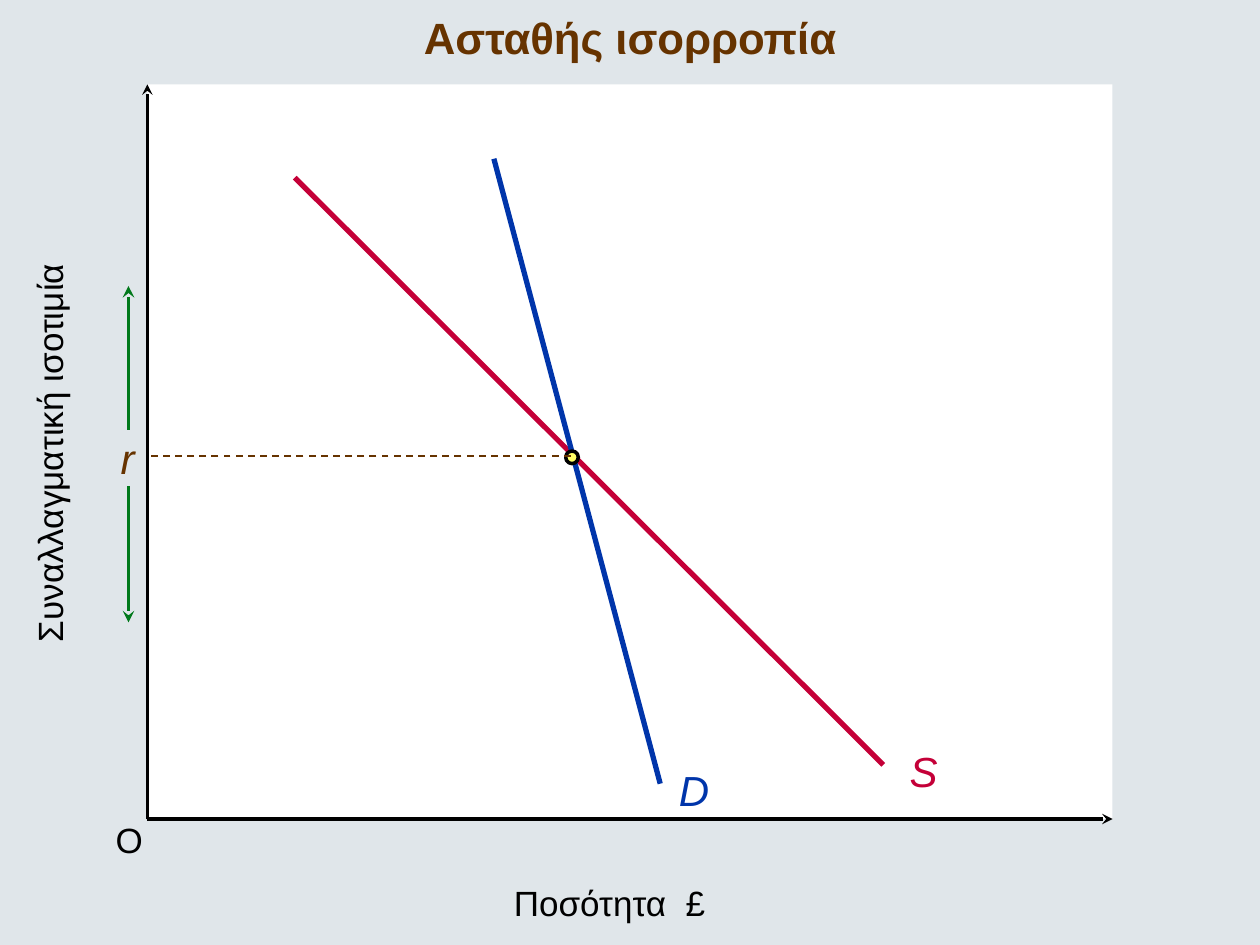
"""Build a slide showing an unstable equilibrium in the currency market."""
from lxml.etree import SubElement
from pptx import Presentation
from pptx.dml.color import RGBColor
from pptx.enum.dml import MSO_LINE
from pptx.enum.shapes import MSO_CONNECTOR, MSO_SHAPE
from pptx.enum.text import MSO_ANCHOR, MSO_AUTO_SIZE, PP_ALIGN
from pptx.oxml import parse_xml
from pptx.oxml.ns import nsdecls, qn
from pptx.util import Inches, Pt

BACKGROUND = RGBColor(0xE0, 0xE6, 0xEA)
WHITE = RGBColor(0xFF, 0xFF, 0xFF)
BLACK = RGBColor(0, 0, 0)
RED = RGBColor(0xC4, 0x00, 0x38)
BLUE = RGBColor(0x00, 0x35, 0xAA)
GREEN = RGBColor(0x01, 0x79, 0x1B)
BROWN = RGBColor(0x66, 0x33, 0x00)
YELLOW = RGBColor(0xFF, 0xFF, 0x66)
FONT = "Arial"

TITLE = "Ασταθής ισορροπία"
LEFT, TOP, RIGHT, BOTTOM = 1.17, 0.67, 8.83, 6.5
ORIGIN = (LEFT, BOTTOM)
RATE_X, RATE_Y = 1.02, 3.62
MARKER = (4.49, 3.58, 0.1, 0.1)

AXES = [(ORIGIN, (LEFT, TOP)), (ORIGIN, (RIGHT, BOTTOM))]
CURVES = [
    ((2.34, 1.41), (7.01, 6.07), RED),
    ((3.92, 1.26), (5.24, 6.22), BLUE),
]
RATE_MOVES = [(3.41, 2.27), (3.86, 4.94)]
LABELS = [
    ("O", (0.82, 6.45, 0.42, 0.43), 20, BLACK, False, 0),
    ("Συναλλαγματική ισοτιμία", (-1.22, 3.36, 3.23, 0.44), 20, BLACK, False, 270),
    ("Ποσότητα  £", (3.98, 6.95, 1.73, 0.44), 20, BLACK, False, 0),
    ("S", (7.12, 5.87, 0.42, 0.5), 24, RED, True, 0),
    ("D", (5.29, 6.02, 0.44, 0.5), 24, BLUE, True, 0),
    ("r", (0.86, 3.38, 0.31, 0.5), 24, BROWN, True, 0),
]
TEXT_SHADOW = (
    f'<a:effectLst {nsdecls("a")}><a:outerShdw dist="25400" dir="2700000">'
    '<a:srgbClr val="000000"/></a:outerShdw></a:effectLst>'
)


def inches(values):
    return [Inches(value) for value in values]


def set_font(font, size, color, bold=False, italic=False):
    font.name, font.size, font.bold, font.italic = FONT, Pt(size), bold, italic
    font.color.rgb = color


def add_line(page, start, end, color, width, arrow=False, dash=None):
    line = page.shapes.add_connector(MSO_CONNECTOR.STRAIGHT, *inches(start + end))
    line.line.color.rgb = color
    line.line.width = Pt(width)
    if dash:
        line.line.dash_style = dash
    if arrow:
        SubElement(line.line._get_or_add_ln(), qn("a:tailEnd"), type="stealth")
    SubElement(line._element.spPr, qn("a:effectLst"))


def add_shape(page, kind, place, fill):
    shape = page.shapes.add_shape(kind, *inches(place))
    shape.shadow.inherit = False
    shape.fill.solid()
    shape.fill.fore_color.rgb = fill
    shape.line.fill.background()
    return shape


def add_label(page, text, place, size, color, italic, rotation):
    box = page.shapes.add_textbox(*inches(place))
    box.rotation = rotation
    box.text_frame.word_wrap = False
    box.text_frame.auto_size = MSO_AUTO_SIZE.SHAPE_TO_FIT_TEXT
    para = box.text_frame.paragraphs[0]
    para.text = text
    set_font(para.font, size, color, italic=italic)


def add_title(page):
    title = page.shapes.title
    title.left, title.top, title.width, title.height = inches((0, 0, 10, 0.59))
    frame = title.text_frame
    frame.vertical_anchor = MSO_ANCHOR.MIDDLE
    para = frame.paragraphs[0]
    para.alignment = PP_ALIGN.CENTER
    span = para.add_run()
    span.text = TITLE
    set_font(span.font, 25, BROWN, bold=True)
    fill = span._r.rPr.find(qn("a:solidFill"))
    fill.addnext(parse_xml(TEXT_SHADOW))


def main():
    deck = Presentation()
    deck.slide_width, deck.slide_height = Inches(10), Inches(7.5)
    page = deck.slides.add_slide(deck.slide_layouts[5])
    page.background.fill.solid()
    page.background.fill.fore_color.rgb = BACKGROUND

    add_title(page)
    plot = (LEFT, TOP, RIGHT - LEFT, BOTTOM - TOP)
    add_shape(page, MSO_SHAPE.RECTANGLE, plot, WHITE)
    for start, end in AXES:
        add_line(page, start, end, BLACK, 2, arrow=True)
    for start, end, color in CURVES:
        add_line(page, start, end, color, 3)

    marker = add_shape(page, MSO_SHAPE.OVAL, MARKER, YELLOW)
    marker.line.color.rgb = BLACK
    marker.line.width = Pt(2)
    add_line(page, (4.53, RATE_Y), (LEFT, RATE_Y), BROWN, 1, dash=MSO_LINE.DASH)
    for start, end in RATE_MOVES:
        add_line(page, (RATE_X, start), (RATE_X, end), GREEN, 2.25, arrow=True)
    for label in LABELS:
        add_label(page, *label)
    deck.save("out.pptx")


if __name__ == "__main__":
    main()
